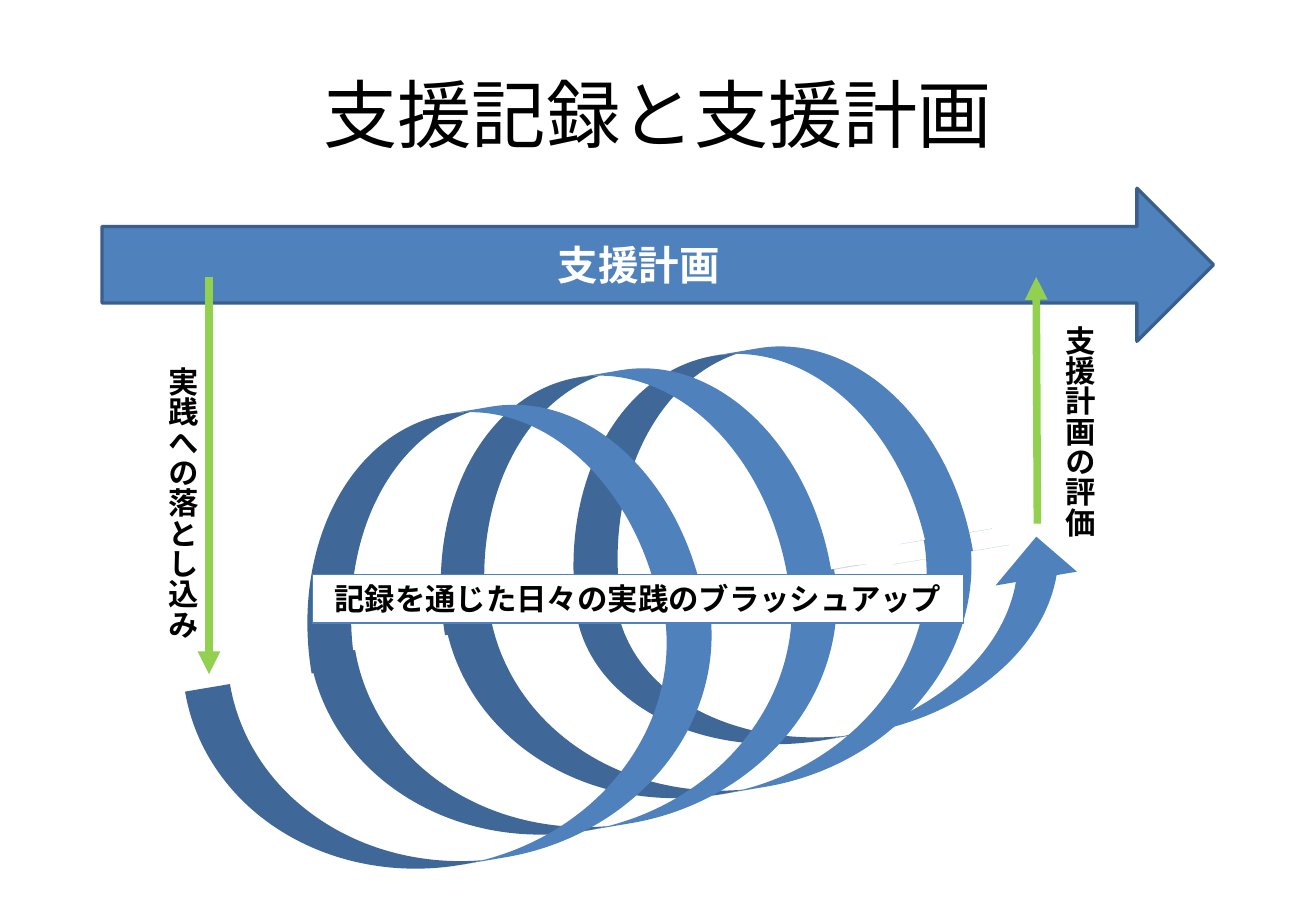
"""Build a slide on how support records feed the support plan."""
from dataclasses import dataclass

from lxml.etree import SubElement
from pptx import Presentation
from pptx.dml.color import RGBColor
from pptx.enum.lang import MSO_LANGUAGE_ID
from pptx.enum.shapes import MSO_CONNECTOR, MSO_SHAPE
from pptx.enum.text import MSO_ANCHOR, PP_ALIGN
from pptx.oxml.ns import qn
from pptx.util import Emu, Inches, Pt

WIDTH, HEIGHT = Inches(10.83), Inches(7.5)
COLOURS = {
    "black": "000000",
    "white": "FFFFFF",
    "blue": "4F81BD",
    "navy": "3A5F8C",
    "green": "92D050",
}
UPPER_ROTATION, LOWER_ROTATION = -9.6, 170.4
UPPER_BEND = (0.19, 0.5, 0)
LOWER_BEND = (0.21, 0.43, 0)
HEAD_BEND = (0.25, 0.5, 0.25)


@dataclass(frozen=True)
class Area:
    """Place and size in percent of the slide's width and height."""
    left: float
    top: float
    width: float
    height: float

    def box(self) -> tuple:
        return (across(self.left), down(self.top),
                across(self.width), down(self.height))


@dataclass(frozen=True)
class Coil:
    """One half turn of the spiral."""
    area: Area
    bend: tuple
    lower: bool


@dataclass(frozen=True)
class Label:
    """A piece of text and its look."""
    text: str
    size: float
    font: str = "Arial"
    colour: str = "black"
    bold: bool = True
    centred: bool = True


@dataclass(frozen=True)
class Pointer:
    """A straight arrow between two points in percent of the slide."""
    start: tuple
    end: tuple


COILS = (
    Coil(Area(44.58, 62.67, 38.58, 18.13), HEAD_BEND, True),
    Coil(Area(42.18, 38.13, 33.23, 25.87), UPPER_BEND, False),
    Coil(Area(32.12, 40.53, 32.49, 25.47), UPPER_BEND, False),
    Coil(Area(34.89, 62.93, 42.18, 23.8), LOWER_BEND, True),
    Coil(Area(21.97, 44.53, 33.05, 25.6), UPPER_BEND, False),
    Coil(Area(24.65, 66.93, 42.18, 23.8), LOWER_BEND, True),
    Coil(Area(15.14, 70.67, 42.18, 23.8), LOWER_BEND, True),
)
POINTERS = (
    Pointer((15.88, 30.4), (15.88, 74)),
    Pointer((78.83, 57.47), (78.74, 30.4)),
)
SIDE_LABELS = (
    (Area(10.98, 38.93, 4.7, 37.07), "実践への落とし込み"),
    (Area(79.29, 34.4, 4.62, 37.07), "支援計画の評価"),
)


def across(percent: float) -> Emu:
    """Turn a share of the slide's width into a length."""
    return Emu(round(WIDTH * percent / 100))


def down(percent: float) -> Emu:
    """Turn a share of the slide's height into a length."""
    return Emu(round(HEIGHT * percent / 100))


def colour(name: str) -> RGBColor:
    """Look up a named colour."""
    return RGBColor.from_string(COLOURS[name])


def write(shape, label: Label, anchor=MSO_ANCHOR.MIDDLE) -> None:
    """Write a label into a shape."""
    frame = shape.text_frame
    frame.word_wrap = True
    frame.vertical_anchor = anchor
    paragraph = frame.paragraphs[0]
    paragraph.alignment = PP_ALIGN.CENTER if label.centred else PP_ALIGN.LEFT
    run = paragraph.add_run()
    run.text = label.text
    run.font.name = label.font
    run.font.size = Pt(label.size)
    run.font.bold = label.bold
    run.font.color.rgb = colour(label.colour)
    run.font.language_id = MSO_LANGUAGE_ID.JAPANESE


def add_figure(slide, kind, area: Area, fill: str, line: str = "", weight: float = 0):
    """Add a filled preset shape, outlined when a line colour is given."""
    shape = slide.shapes.add_shape(kind, *area.box())
    shape.shadow.inherit = False
    shape.fill.solid()
    shape.fill.fore_color.rgb = colour(fill)
    if line:
        shape.line.color.rgb = colour(line)
        shape.line.width = Pt(weight)
    else:
        shape.line.fill.background()
    return shape


def add_text(slide, area: Area, label: Label, vertical: bool = False) -> None:
    """Add a text box, with upright columns when vertical."""
    box = slide.shapes.add_textbox(*area.box())
    write(box, label, MSO_ANCHOR.TOP if vertical else MSO_ANCHOR.MIDDLE)
    if vertical:
        box.text_frame._txBody.bodyPr.set("vert", "eaVert")


def add_coil(slide, coil: Coil) -> None:
    """Add one half turn of the spiral."""
    shape = add_figure(slide, MSO_SHAPE.CURVED_DOWN_ARROW, coil.area, "blue")
    for index, value in enumerate(coil.bend):
        shape.adjustments[index] = value
    shape.rotation = LOWER_ROTATION if coil.lower else UPPER_ROTATION
    if coil.lower:
        shape._element.spPr.get_or_add_xfrm().set("flipH", "1")


def add_pointer(slide, pointer: Pointer) -> None:
    """Add a green arrow."""
    (start_x, start_y), (end_x, end_y) = pointer.start, pointer.end
    connector = slide.shapes.add_connector(
        MSO_CONNECTOR.STRAIGHT,
        across(start_x), down(start_y), across(end_x), down(end_y))
    connector.line.color.rgb = colour("green")
    connector.line.width = Pt(4.5)
    SubElement(connector.line._get_or_add_ln(), qn("a:tailEnd"), type="triangle")
    SubElement(connector._element.spPr, qn("a:effectLst"))


def main() -> None:
    """Draw the slide and save it."""
    presentation = Presentation()
    presentation.slide_width, presentation.slide_height = WIDTH, HEIGHT
    slide = presentation.slides.add_slide(presentation.slide_layouts[6])

    add_text(slide, Area(5, 4, 90, 16.67),
             Label("支援記録と支援計画", 44, "Calibri", bold=False))
    plan = add_figure(slide, MSO_SHAPE.RIGHT_ARROW,
                      Area(7.75, 20.67, 84.46, 16.8), "blue", "navy", 2)
    write(plan, Label("支援計画", 24, "Calibri", "white"))
    for coil in COILS:
        add_coil(slide, coil)
    banner = add_figure(slide, MSO_SHAPE.RECTANGLE,
                        Area(23.72, 63.07, 49.48, 5.33), "white", "blue", 0.75)
    write(banner, Label("記録を通じた日々の実践のブラッシュアップ", 18), MSO_ANCHOR.TOP)
    for pointer in POINTERS:
        add_pointer(slide, pointer)
    for area, text in SIDE_LABELS:
        add_text(slide, area, Label(text, 18, centred=False), vertical=True)

    presentation.save("out.pptx")


if __name__ == "__main__":
    main()
